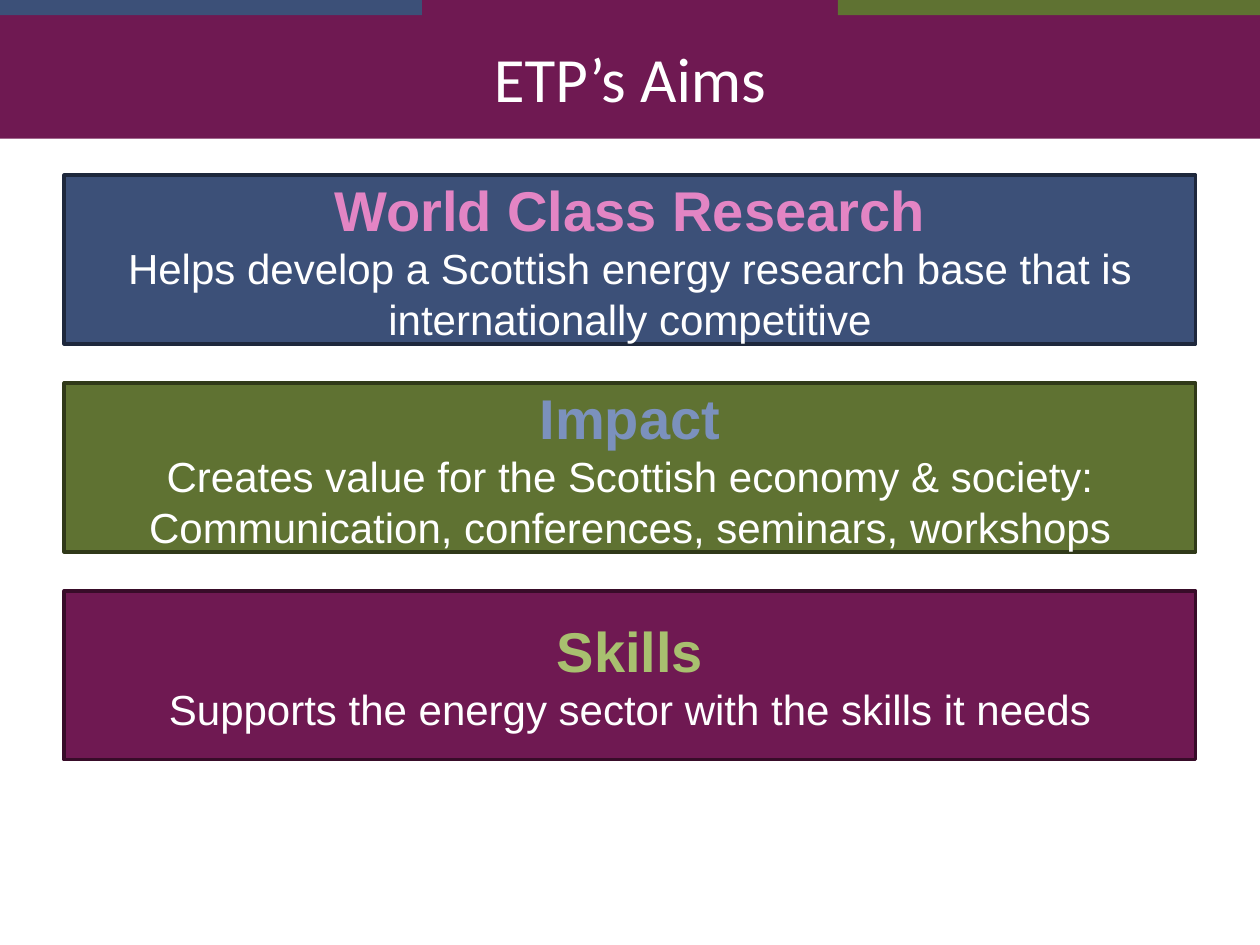
from pptx import Presentation
from pptx.dml.color import RGBColor
from pptx.enum.shapes import MSO_SHAPE
from pptx.enum.text import MSO_ANCHOR, PP_ALIGN
from pptx.util import Inches, Pt

BLUE = RGBColor(0x3C, 0x50, 0x78)
PLUM = RGBColor(0x6F, 0x19, 0x52)
GREEN = RGBColor(0x5F, 0x72, 0x32)
DARK_BLUE = RGBColor(0x1E, 0x28, 0x3C)
DARK_PLUM = RGBColor(0x38, 0x0C, 0x29)
DARK_GREEN = RGBColor(0x30, 0x39, 0x19)
PINK = RGBColor(0xE3, 0x85, 0xC4)
LIGHT_BLUE = RGBColor(0x7B, 0x91, 0xBD)
LIGHT_GREEN = RGBColor(0xA8, 0xC0, 0x6F)
WHITE = RGBColor(0xFF, 0xFF, 0xFF)

# Content
TITLE = "ETP’s Aims"
AIMS = [
    ("World Class Research",
     ["Helps develop a Scottish energy research base that is internationally competitive"],
     BLUE, DARK_BLUE, PINK),
    ("Impact",
     ["Creates value for the Scottish economy & society:",
      "Communication, conferences, seminars, workshops"],
     GREEN, DARK_GREEN, LIGHT_BLUE),
    ("Skills",
     ["Supports the energy sector with the skills it needs"],
     PLUM, DARK_PLUM, LIGHT_GREEN),
]
STRIPES = [(0, BLUE), (3.35, PLUM), (6.65, GREEN)]

# Layout in inches
SLIDE_W, SLIDE_H = 10, 7.5
STRIPE_W, STRIPE_H = 3.35, 0.12
TITLE_H = 0.98
AIM_LEFT, AIM_TOP, AIM_W, AIM_H = 0.51, 1.39, 8.98, 1.34
AIM_STEP = 1.65

# Text formats
TITLE_FONT = {"name": "Calibri", "size": Pt(36), "bold": False}
HEADING_FONT = {"name": "Arial", "size": Pt(32), "bold": True}
DETAIL_FONT = {"name": "Arial", "size": Pt(24), "bold": False}


def fill_solid(shape, color):
    shape.fill.solid()
    shape.fill.fore_color.rgb = color


def add_block(slide, left, top, width, height, color):
    block = slide.shapes.add_shape(
        MSO_SHAPE.RECTANGLE, *map(Inches, (left, top, width, height)))
    block.shadow.inherit = False
    fill_solid(block, color)
    block.line.fill.background()
    return block


def write_lines(shape, lines):
    frame = shape.text_frame
    frame.word_wrap = True
    frame.vertical_anchor = MSO_ANCHOR.MIDDLE
    for i, (text, font_format, color) in enumerate(lines):
        paragraph = frame.add_paragraph() if i else frame.paragraphs[0]
        paragraph.alignment = PP_ALIGN.CENTER
        run = paragraph.add_run()
        run.text = text
        for key, value in font_format.items():
            setattr(run.font, key, value)
        run.font.color.rgb = color


def main():
    prs = Presentation()
    prs.slide_width, prs.slide_height = Inches(SLIDE_W), Inches(SLIDE_H)
    slide = prs.slides.add_slide(prs.slide_layouts[5])  # title only

    # Top stripes
    for left, color in STRIPES:
        add_block(slide, left, 0, STRIPE_W, STRIPE_H, color)

    # Title band
    title = slide.shapes.title
    title.left, title.top = Inches(0), Inches(STRIPE_H)
    title.width, title.height = Inches(SLIDE_W), Inches(TITLE_H)
    fill_solid(title, PLUM)
    write_lines(title, [(TITLE, TITLE_FONT, WHITE)])

    # Aims, one box each
    for i, (heading, details, color, border, heading_color) in enumerate(AIMS):
        aim = add_block(slide, AIM_LEFT, AIM_TOP + i * AIM_STEP, AIM_W, AIM_H, color)
        aim.line.color.rgb = border
        aim.line.width = Pt(2)
        write_lines(aim, [(heading, HEADING_FONT, heading_color)]
                    + [(detail, DETAIL_FONT, WHITE) for detail in details])

    prs.save("out.pptx")


if __name__ == "__main__":
    main()
